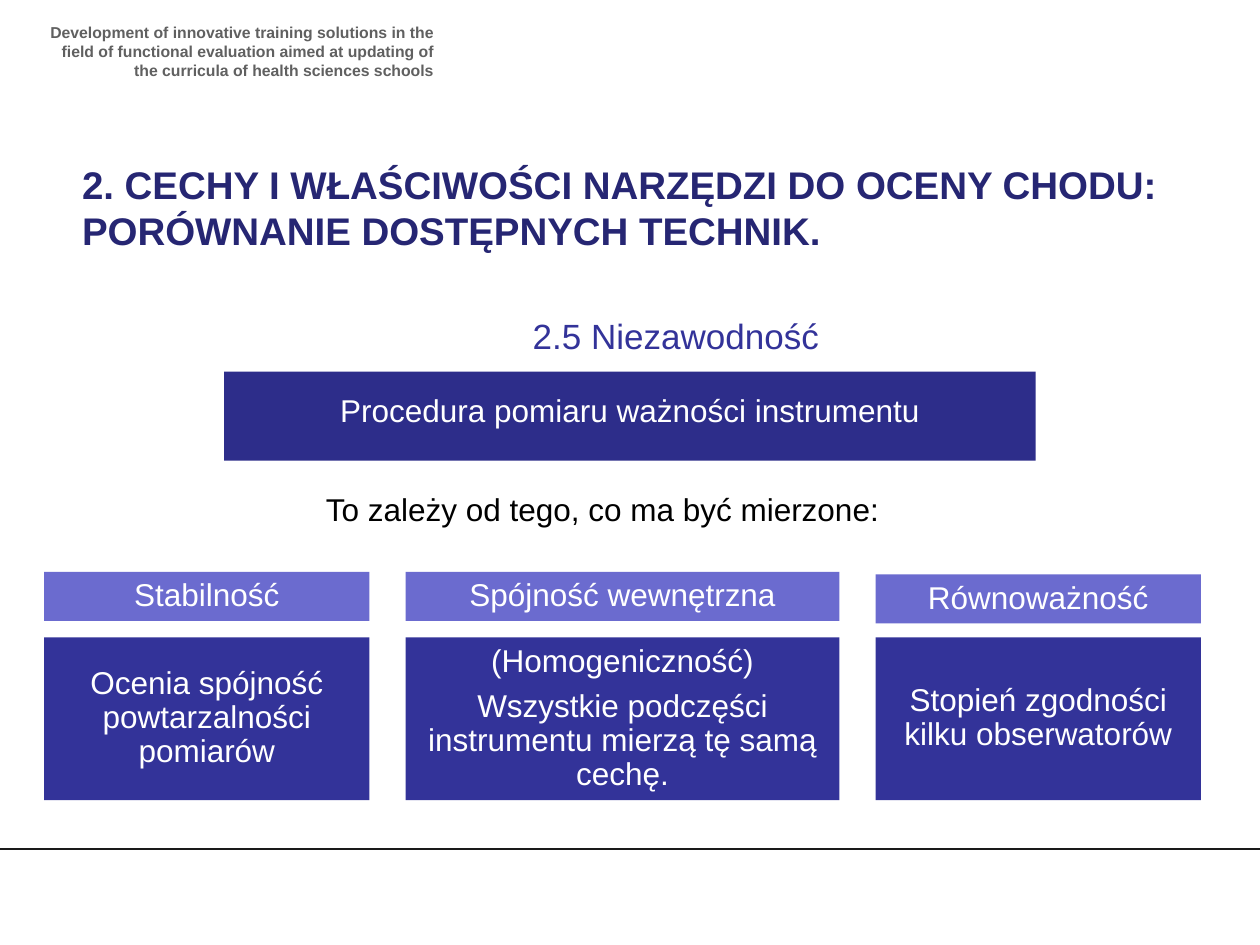
from dataclasses import dataclass

import lxml.etree
import pptx
import pptx.dml.color
import pptx.enum.shapes
import pptx.enum.text
import pptx.oxml.ns
import pptx.util

Cm = pptx.util.Cm
Pt = pptx.util.Pt
ALIGN = pptx.enum.text.PP_ALIGN
ANCHOR = pptx.enum.text.MSO_ANCHOR


@dataclass(frozen=True)
class Theme:
    font: str = "Arial"
    title_color: str = "262673"
    accent: str = "333399"
    banner: str = "2D2D8A"
    heading: str = "6B6BCF"
    muted: str = "606060"
    rule: str = "1A1A1A"
    black: str = "000000"
    white: str = "FFFFFF"
    project_size: int = 9
    body_size: int = 18
    subtitle_size: int = 20
    title_size: int = 22


THEME = Theme()


def color(value):
    return pptx.dml.color.RGBColor.from_string(value)


def place(shape, box):
    shape.left, shape.top, shape.width, shape.height = (Cm(length) for length in box)


def write(shape, text, size, text_color, bold=False, align=ALIGN.LEFT, anchor=ANCHOR.TOP):
    frame = shape.text_frame
    frame.word_wrap = True
    frame.vertical_anchor = anchor
    frame.text = text
    for paragraph in frame.paragraphs:
        paragraph.alignment = align
        for run in paragraph.runs:
            run.font.name = THEME.font
            run.font.size = Pt(size)
            run.font.bold = bold
            run.font.color.rgb = color(text_color)
    return frame


def add_text(slide, box, text, size, text_color, **options):
    shape = slide.shapes.add_textbox(*(Cm(length) for length in box))
    write(shape, text, size, text_color, **options)


def add_block(slide, box, text, fill):
    shape = slide.shapes.add_shape(
        pptx.enum.shapes.MSO_SHAPE.RECTANGLE, *(Cm(length) for length in box)
    )
    shape.shadow.inherit = False
    shape.fill.solid()
    shape.fill.fore_color.rgb = color(fill)
    shape.line.fill.background()
    frame = write(shape, text, THEME.body_size, THEME.white,
                  align=ALIGN.CENTER, anchor=ANCHOR.MIDDLE)
    frame.margin_left = frame.margin_right = Cm(0.03)
    frame.margin_top = frame.margin_bottom = Cm(0.03)
    for paragraph in frame.paragraphs:
        paragraph.line_spacing = 0.9
        paragraph.space_after = Pt(6.3)
    return shape


def add_title(slide, box, text):
    title = slide.shapes.title
    place(title, box)
    frame = write(title, text, THEME.title_size, THEME.title_color, bold=True)
    frame.auto_size = pptx.enum.text.MSO_AUTO_SIZE.NONE


def add_footer_rule(slide, top, width):
    rule = slide.shapes.add_connector(
        pptx.enum.shapes.MSO_CONNECTOR.STRAIGHT, 0, Cm(top), Cm(width), Cm(top)
    )
    rule.line.color.rgb = color(THEME.rule)
    rule.line.width = Pt(1)
    lxml.etree.SubElement(rule._element.spPr, pptx.oxml.ns.qn("a:effectLst"))


def add_procedure(slide, box):
    left, top, width, height = box
    add_text(slide, (left + 5.97, top, 6.6, 1.96), "2.5 Niezawodność",
             THEME.subtitle_size, THEME.accent)
    banner = add_block(slide, (left, top + 1.27, width, 1.8),
                       "Procedura pomiaru ważności instrumentu", THEME.banner)
    paragraph = banner.text_frame.paragraphs[0]
    paragraph.line_spacing = Pt(14)
    paragraph.space_after = Pt(0)
    add_text(slide, (left + 1.8, top + height - 1.02, 12.75, 1.02),
             "To zależy od tego, co ma być mierzone:", THEME.body_size, THEME.black)


def add_columns(slide, box, columns):
    left, top, width, height = box
    gap, heading_height, body_height = 0.73, 0.99, 3.28
    available = width - gap * (len(columns) - 1)
    for share, drop, heading, body in columns:
        column_width = available * share
        add_block(slide, (left, top + drop, column_width, heading_height),
                  heading, THEME.heading)
        add_block(slide, (left, top + height - body_height, column_width, body_height),
                  body, THEME.accent)
        left += column_width + gap


def main():
    presentation = pptx.Presentation()
    presentation.slide_width = Cm(25.4)
    presentation.slide_height = Cm(19.05)
    slide = presentation.slides.add_slide(presentation.slide_layouts[5])

    add_footer_rule(slide, 17.12, 25.4)
    add_text(slide, (0.71, 0.33, 8.28, 1.19),
             "Development of innovative training solutions in the ﬁeld of functional "
             "evaluation aimed at updating of the curricula of health sciences schools",
             THEME.project_size, THEME.muted, bold=True, align=ALIGN.RIGHT)
    add_title(slide, (1.4, 3.12, 23.09, 2.13),
              "2. CECHY I WŁAŚCIWOŚCI NARZĘDZI DO OCENY CHODU: "
              "PORÓWNANIE DOSTĘPNYCH TECHNIK.")
    add_procedure(slide, (4.52, 6.22, 16.36, 4.55))
    add_columns(slide, (0.89, 11.53, 23.32, 4.6), [
        (0.3, 0, "Stabilność", "Ocenia spójność powtarzalności pomiarów"),
        (0.4, 0, "Spójność wewnętrzna",
         "(Homogeniczność)\nWszystkie podczęści instrumentu mierzą tę samą cechę."),
        (0.3, 0.05, "Równoważność", "Stopień zgodności kilku obserwatorów"),
    ])
    presentation.save("out.pptx")


if __name__ == "__main__":
    main()
